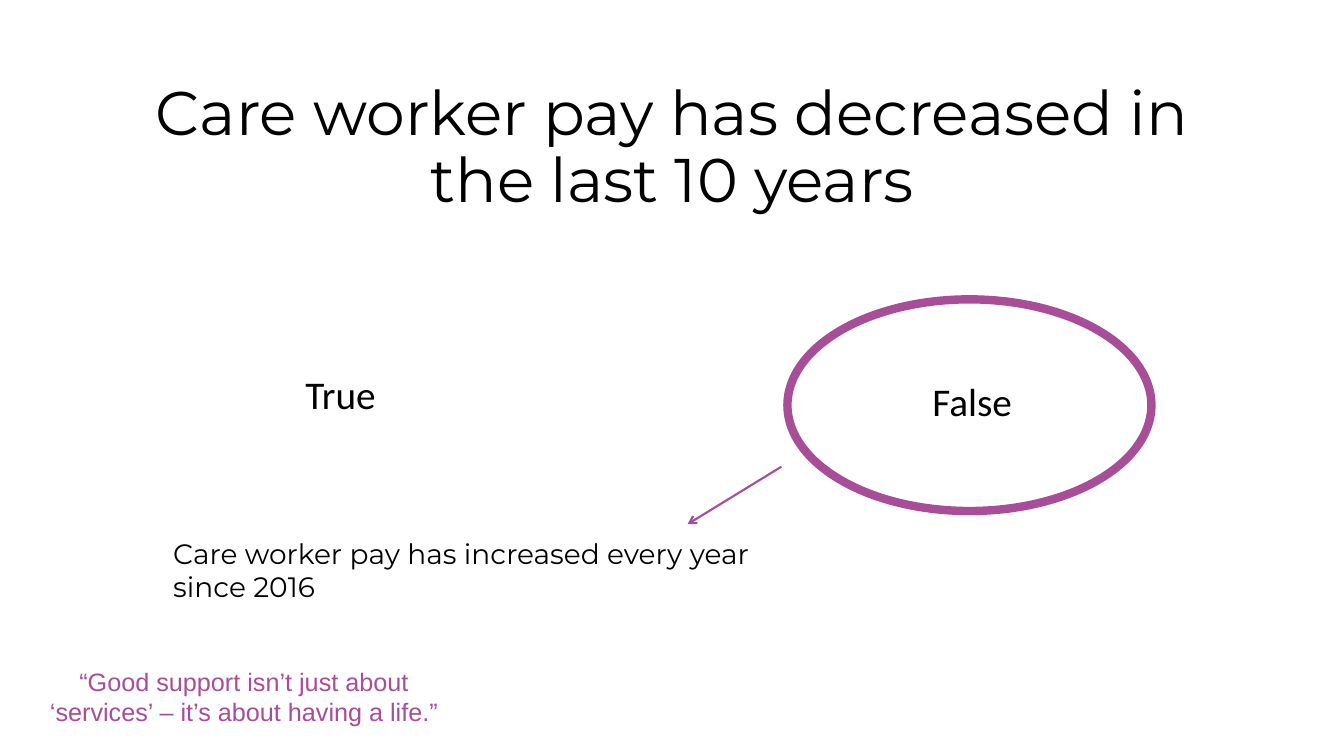
from lxml import etree
from pptx import Presentation
from pptx.dml.color import RGBColor
from pptx.enum import shapes, text
from pptx.oxml import ns
from pptx.util import Inches, Pt

PURPLE, BLACK = "A84D98", "000000"
LEFT, CENTER = text.PP_ALIGN.LEFT, text.PP_ALIGN.CENTER

statements = [
    (["“Good support isn’t just about", "‘services’ – it’s about having a life.”"],
     (0.17, 6.56, 4.5, 0.71), "Arial", 18, PURPLE, CENTER, 1),
    (["Care worker pay has decreased in the last 10 years"],
     (0.92, 0.77, 11.5, 2.71), "Montserrat", 44, BLACK, CENTER, 0.9),
    (["True"], (2.93, 3.68, 1.25, 0.69), "Calibri", 28, BLACK, LEFT, 0.9),
    (["False"], (9.15, 3.75, 1.77, 0.69), "Calibri", 28, BLACK, LEFT, 0.9),
    (["Care worker pay has increased every year since 2016"],
     (1.62, 5.27, 6.67, 0.77), "Montserrat", 20, BLACK, LEFT, 1),
]
answer_ring = (7.81, 2.97, 3.61, 2.1)
explanation_arrow = (7.75, 4.63, 6.82, 5.2)


def color(value):
    return RGBColor.from_string(value)


def inches(values):
    return [Inches(value) for value in values]


def add_statement(slide, lines, place, font, size, ink, align, spacing):
    frame = slide.shapes.add_textbox(*inches(place)).text_frame
    frame.word_wrap = True
    for index, line in enumerate(lines):
        paragraph = frame.add_paragraph() if index else frame.paragraphs[0]
        paragraph.alignment = align
        paragraph.line_spacing = spacing
        run = paragraph.add_run()
        run.text = line
        run.font.name = font
        run.font.size = Pt(size)
        run.font.color.rgb = color(ink)


def set_line(outline, width):
    outline.color.rgb = color(PURPLE)
    outline.width = Pt(width)


def main():
    deck = Presentation()
    deck.slide_width, deck.slide_height = Inches(13.33), Inches(7.5)
    slide = deck.slides.add_slide(deck.slide_layouts[6])

    for statement in statements:
        add_statement(slide, *statement)

    ring = slide.shapes.add_shape(shapes.MSO_SHAPE.OVAL, *inches(answer_ring))
    ring.shadow.inherit = False
    ring.fill.background()
    set_line(ring.line, 6)

    arrow = slide.shapes.add_connector(
        shapes.MSO_CONNECTOR.STRAIGHT, *inches(explanation_arrow))
    set_line(arrow.line, 1.5)
    etree.SubElement(arrow.line._get_or_add_ln(), ns.qn("a:tailEnd"), type="arrow")
    etree.SubElement(arrow._element.spPr, ns.qn("a:effectLst"))

    deck.save("out.pptx")


if __name__ == "__main__":
    main()
